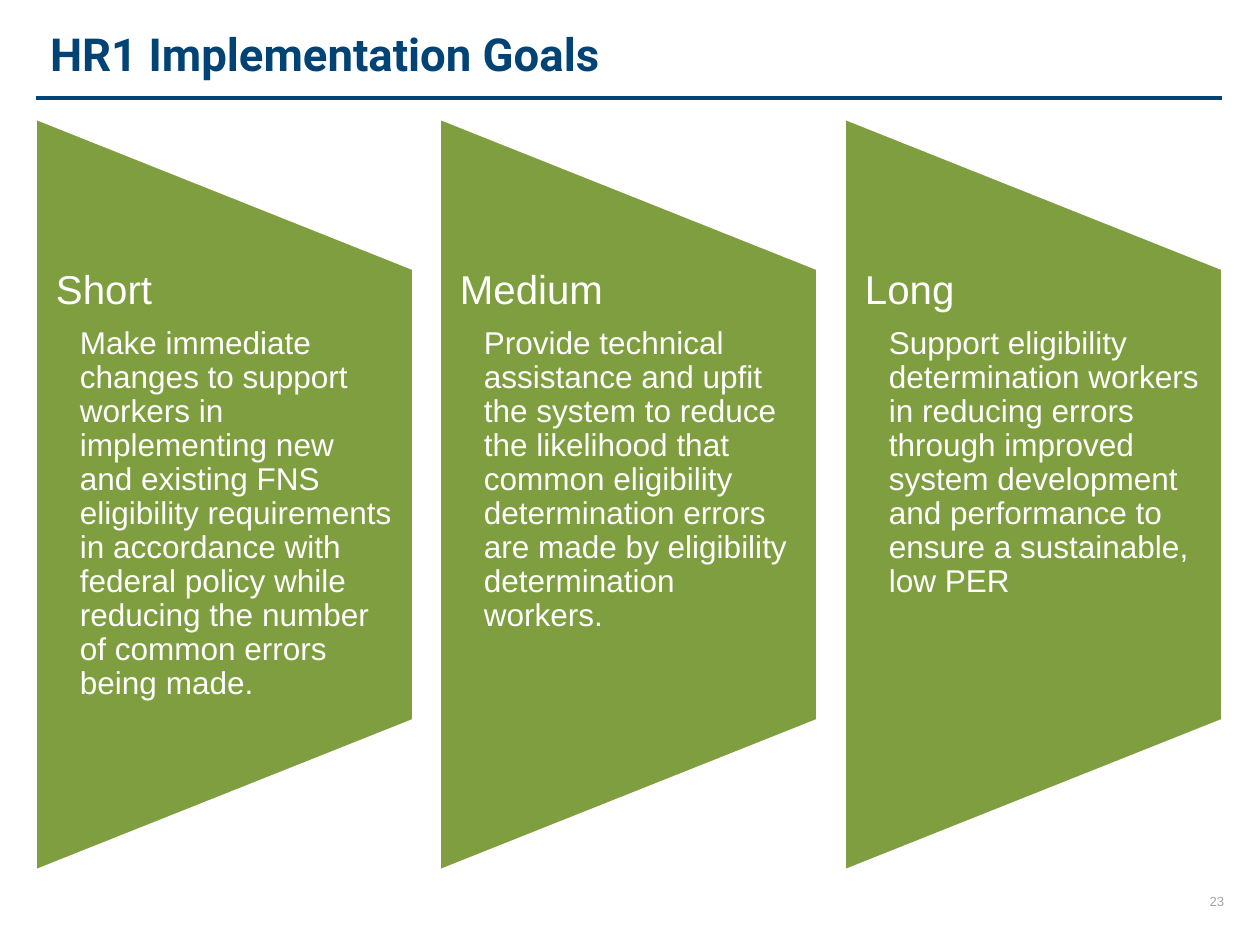
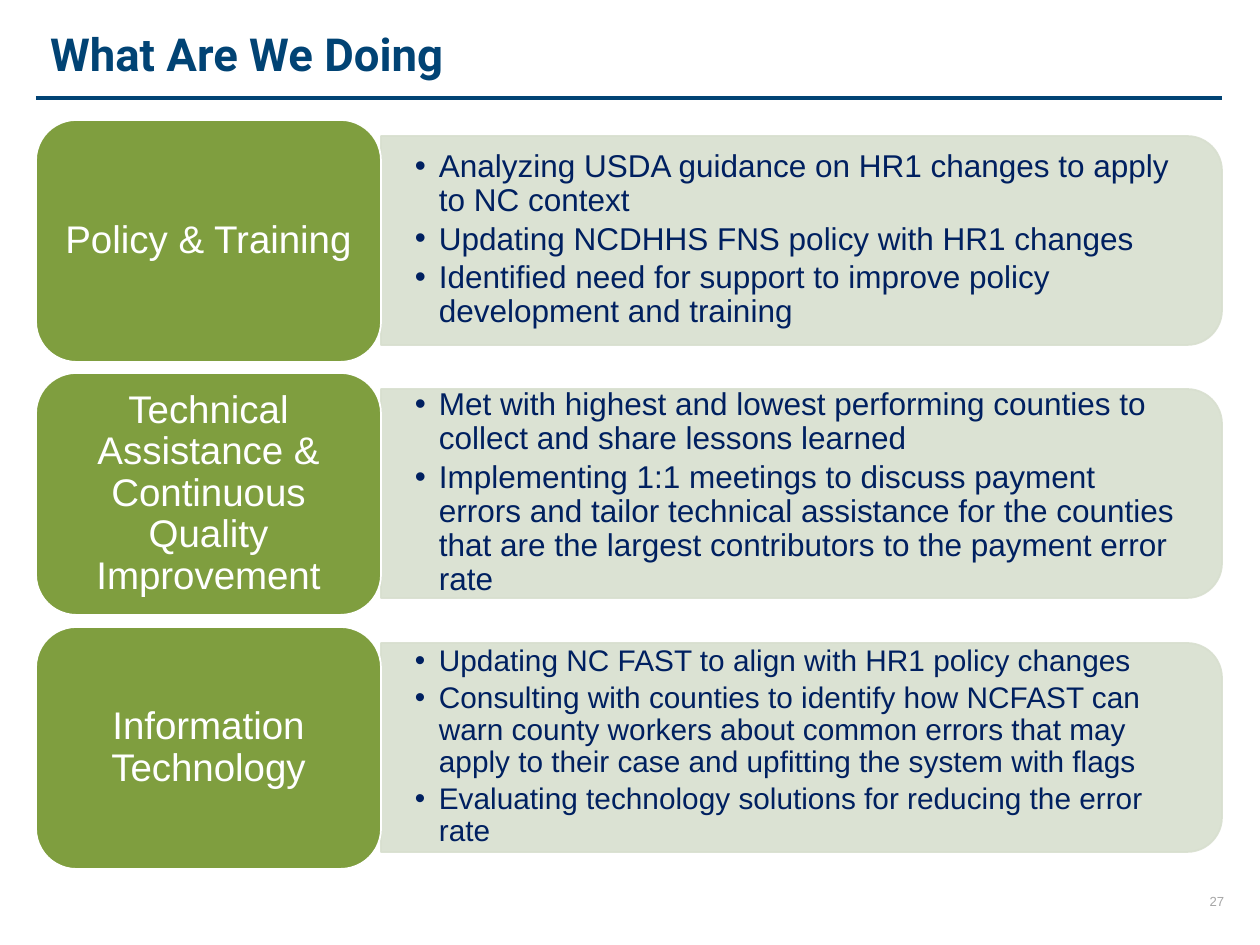
from dataclasses import dataclass
from typing import Any

from lxml.etree import SubElement
from pptx import Presentation
from pptx.dml.color import RGBColor
from pptx.enum.shapes import MSO_CONNECTOR, MSO_SHAPE
from pptx.enum.text import MSO_ANCHOR, MSO_AUTO_SIZE, PP_ALIGN
from pptx.oxml.ns import qn
from pptx.util import Pt

PX = 914400 / 126
TITLE_ONLY = 5

GOALS = [
    ("Short", "Make immediate changes to support workers in implementing new and existing FNS "
              "eligibility requirements in accordance with federal policy while reducing the "
              "number of common errors being made."),
    ("Medium", "Provide technical assistance and upfit the system to reduce the likelihood that "
               "common eligibility determination errors are made by eligibility determination "
               "workers."),
    ("Long", "Support eligibility determination workers in reducing errors through improved "
             "system development and performance to ensure a sustainable, low PER"),
]

WORKSTREAMS = [
    ("Policy & Training", 18, [
        "Analyzing USDA guidance on HR1 changes to apply to NC context",
        "Updating NCDHHS FNS policy with HR1 changes",
        "Identified need for support to improve policy development and training",
    ]),
    ("Technical Assistance & Continuous Quality Improvement", 18, [
        "Met with highest and lowest performing counties to collect and share lessons learned",
        "Implementing 1:1 meetings to discuss payment errors and tailor technical assistance for "
        "the counties that are the largest contributors to the payment error rate",
    ]),
    ("Information Technology", 17, [
        "Updating NC FAST to align with HR1 policy changes",
        "Consulting with counties to identify how NCFAST can warn county workers about common "
        "errors that may apply to their case and upfitting the system with flags",
        "Evaluating technology solutions for reducing the error rate",
    ]),
]


def px(length):
    return round(length * PX)


def rgb(value):
    return RGBColor.from_string(value)


def apply(target, values):
    for name, value in values.items():
        setattr(target, name, value)


@dataclass
class Deck:
    presentation: Any
    slide: Any = None
    navy: str = "014374"
    green: str = "7F9E3F"
    sage: str = "D8DFCF"
    ink: str = "002060"
    white: str = "FFFFFF"
    grey: str = "A6A6A6"
    title_font: str = "Roboto"
    body_font: str = "Arial"

    def start(self, heading, number):
        layout = self.presentation.slide_layouts[TITLE_ONLY]
        self.slide = self.presentation.slides.add_slide(layout)
        title = self.slide.shapes.title
        apply(title, {"left": px(37), "top": px(16), "width": px(1188), "height": px(82)})
        self.frame(title, 13, 6)
        self.paragraph(title, heading, 26, self.navy, font=self.title_font, bold=True)
        self.rule(36, 98, 1222)
        page = self.text(1194, 893, 43, 16, 0, 0)
        self.paragraph(page, number, 7.5, self.grey, align=PP_ALIGN.CENTER, spacing=1, indent=3)

    def frame(self, holder, side, edge, anchor=MSO_ANCHOR.MIDDLE):
        apply(holder.text_frame, {
            "auto_size": MSO_AUTO_SIZE.NONE, "word_wrap": True, "vertical_anchor": anchor,
            "margin_left": px(side), "margin_right": px(side),
            "margin_top": px(edge), "margin_bottom": px(edge),
        })

    def paragraph(self, holder, words, size, color, font=None, bold=False, align=PP_ALIGN.LEFT,
                  spacing=0.9, after=0, indent=0, level=0, bullet=None):
        frame = holder.text_frame
        line = frame.add_paragraph() if frame.text else frame.paragraphs[0]
        apply(line, {"alignment": align, "line_spacing": spacing, "space_before": Pt(0),
                     "space_after": Pt(after), "level": level})
        run = line.add_run()
        run.text = words
        apply(run.font, {"name": font or self.body_font, "size": Pt(size), "bold": bold})
        run.font.color.rgb = rgb(color)
        properties = line._p.get_or_add_pPr()
        properties.set("marL", str(px(indent)))
        properties.set("indent", str(px(-indent if bullet else 0)))
        if bullet:
            SubElement(properties, qn("a:buFont")).set("typeface", self.body_font)
            SubElement(properties, qn("a:buChar")).set("char", bullet)

    def text(self, left, top, width, height, side, edge, anchor=MSO_ANCHOR.MIDDLE):
        box = self.slide.shapes.add_textbox(px(left), px(top), px(width), px(height))
        self.frame(box, side, edge, anchor)
        return box

    def rule(self, left, top, right):
        line = self.slide.shapes.add_connector(
            MSO_CONNECTOR.STRAIGHT, px(left), px(top), px(right), px(top))
        line.line.color.rgb = rgb(self.navy)
        line.line.width = Pt(2.25)
        SubElement(line._element.spPr, qn("a:effectLst"))

    def shape(self, kind, left, top, width, height, fill, outline, opacity=100):
        block = self.slide.shapes.add_shape(kind, px(left), px(top), px(width), px(height))
        block.shadow.inherit = False
        block.fill.solid()
        block.fill.fore_color.rgb = rgb(fill)
        block.line.color.rgb = rgb(outline)
        block.line.width = Pt(1)
        if opacity < 100:
            for color in block._element.spPr.iter(qn("a:srgbClr")):
                SubElement(color, qn("a:alpha")).set("val", str(opacity * 1000))
        return block

    def turned(self, kind, angle, left, top, width, height, *style):
        shift = (width - height) / 2
        block = self.shape(kind, left + shift, top - shift, height, width, *style)
        block.rotation = angle

    def goal(self, left, term, aim):
        self.turned(MSO_SHAPE.FLOWCHART_MANUAL_OPERATION, 270, left, 119, 377, 751,
                    self.green, self.white)
        words = self.text(left, 270, 377, 451, 20, 0, MSO_ANCHOR.TOP)
        self.paragraph(words, term, 23, self.white, after=8)
        self.paragraph(words, aim, 18, self.white, after=2.7, indent=24, level=1)

    def workstream(self, top, area, size, actions):
        self.turned(MSO_SHAPE.ROUND_2_SAME_RECTANGLE, 90, 381, top + 16, 841, 209,
                    self.sage, self.sage, 90)
        details = self.text(381, top + 26, 830, 188, 34, 18)
        for action in actions:
            self.paragraph(details, action, size, self.ink, after=size * 0.15, indent=24,
                           level=1, bullet="•")
        label = self.shape(MSO_SHAPE.ROUNDED_RECTANGLE, 36, top, 345, 242,
                           self.green, self.white)
        self.frame(label, 11, 6)
        self.paragraph(label, area, 22, self.white, align=PP_ALIGN.CENTER, after=7.7)


def main():
    presentation = Presentation()
    apply(presentation, {"slide_width": px(1260), "slide_height": px(945)})
    deck = Deck(presentation)

    deck.start("HR1 Implementation Goals", "23")
    for column, (term, aim) in enumerate(GOALS):
        deck.goal(36 + column * 809 // 2, term, aim)

    deck.start("What Are We Doing", "27")
    for row, (area, size, actions) in enumerate(WORKSTREAMS):
        deck.workstream(120 + row * 507 // 2, area, size, actions)

    presentation.save("out.pptx")


if __name__ == "__main__":
    main()
